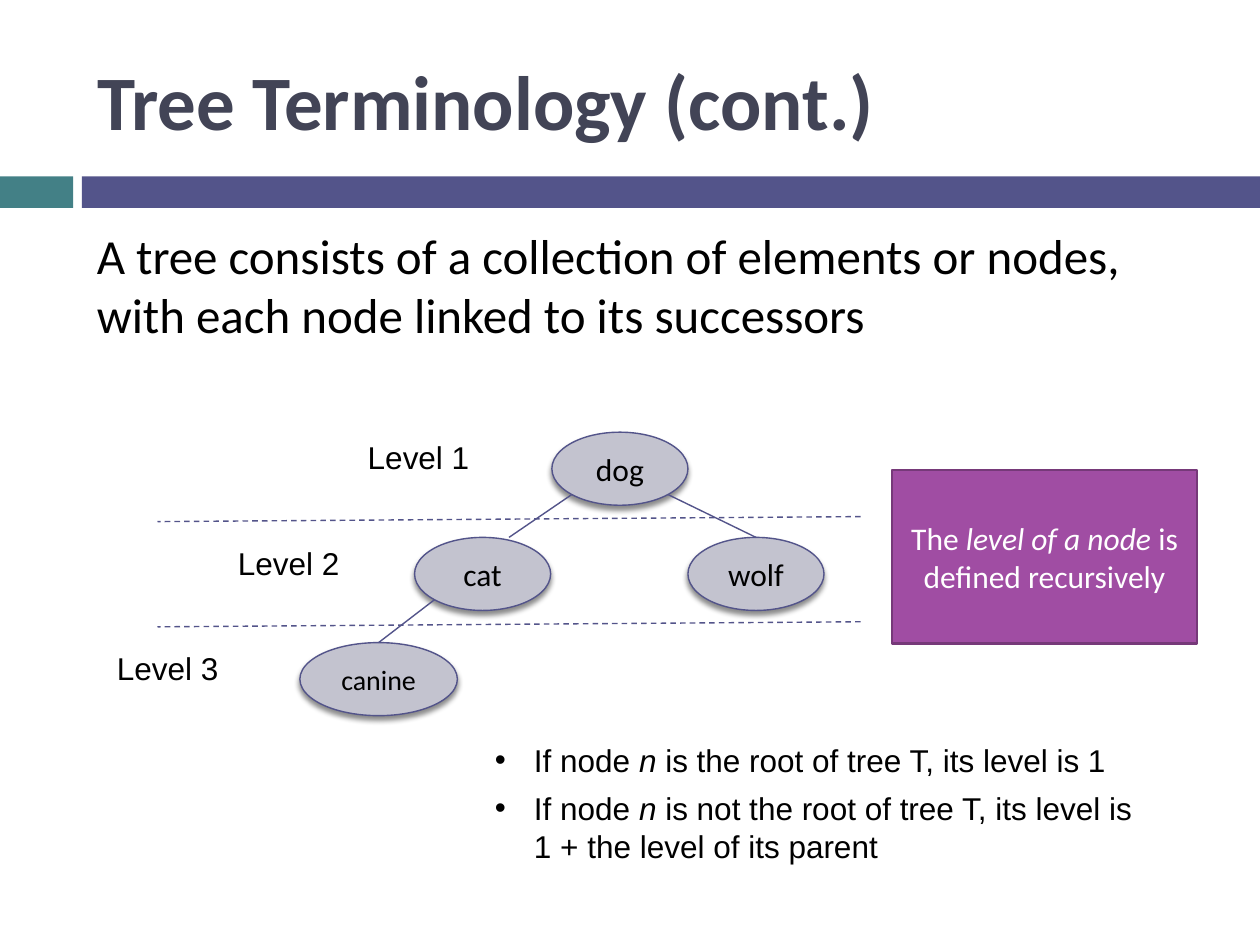
from lxml import etree
from pptx import Presentation
from pptx.dml.color import RGBColor
from pptx.enum import dml, shapes, text
from pptx.oxml import parse_xml
from pptx.oxml.ns import nsdecls, qn
from pptx.util import Inches, Pt

HUES = {"teal": "438086", "indigo": "53548A", "title": "424456",
        "node": "C3C3CF", "purple": "A04DA3", "edge": "763979",
        "black": "000000", "white": "FFFFFF"}

TITLE = "Tree Terminology (cont.)"
INTRO = ("A tree consists of a collection of elements or nodes, "
         "with each node linked to its successors")
# Each run is (words, italic)
NOTE = [("The ", False), ("level of a node", True),
        (" is defined recursively", False)]
RULES = [
    [("If node ", False), ("n", True),
     (" is the root of tree T, its level is 1", False)],
    [("If node ", False), ("n", True),
     (" is not the root of tree T, its level is \v1 + the level of its parent", False)],
]
BARS = [(0, 0.58, "teal"), (0.65, 9.35, "indigo")]
# name: (level, left, width, text size)
NODES = {"dog": (1, 4.38, 1.08, 18), "cat": (2, 3.29, 1.08, 18),
         "wolf": (2, 5.46, 1.08, 18), "canine": (3, 2.38, 1.25, 16)}
# parent, side the link leaves from, child, shift at the child's top
LINKS = [("dog", -1, "cat", 0.21), ("dog", 1, "wolf", 0),
         ("cat", -1, "canine", 0)]
LABELS = [2.82, 1.79, 0.83]
TOP, STEP, HIGH = 3.43, 0.835, 0.58
DIAG = 0.354  # share of an ellipse's size from its centre to its 45° point


def hue(name):
    return RGBColor.from_string(HUES[name])


def level_top(level):
    return TOP + (level - 1) * STEP


def write(para, runs, size, color="black", font="Calibri", bold=False):
    for words, slant in runs:
        for i, part in enumerate(words.split("\v")):
            if i:
                para.add_line_break()
            run = para.add_run()
            run.text = part
            run.font.size, run.font.name = Pt(size), font
            run.font.italic, run.font.bold = slant, bold
            run.font.color.rgb = hue(color)


def add_text(slide, box, wrap=True):
    frame = slide.shapes.add_textbox(*map(Inches, box)).text_frame
    frame.word_wrap = wrap
    return frame


def add_block(slide, kind, box, fill, line=None, width=0.79):
    shape = slide.shapes.add_shape(kind, *map(Inches, box))
    shape.shadow.inherit = False
    shape.fill.solid()
    shape.fill.fore_color.rgb = hue(fill)
    if line:
        shape.line.color.rgb = hue(line)
        shape.line.width = Pt(width)
    else:
        shape.line.fill.background()
    frame = shape.text_frame
    frame.word_wrap = True
    frame.vertical_anchor = text.MSO_ANCHOR.MIDDLE
    frame.paragraphs[0].alignment = text.PP_ALIGN.CENTER
    return shape


def add_shadow(shape):
    effects = shape._element.spPr.find(qn("a:effectLst"))
    effects.append(parse_xml(
        f'<a:outerShdw {nsdecls("a")} blurRad="{Pt(3)}" dist="{Pt(2.4)}" '
        'dir="5400000" rotWithShape="0"><a:srgbClr val="000000">'
        '<a:alpha val="45000"/></a:srgbClr></a:outerShdw>'))


def add_line(slide, start, end, dash=False):
    line = slide.shapes.add_connector(
        shapes.MSO_CONNECTOR.STRAIGHT, *map(Inches, start + end))
    line.line.color.rgb = hue("indigo")
    line.line.width = Pt(0.79)
    if dash:
        line.line.dash_style = dml.MSO_LINE.DASH
    etree.SubElement(line._element.spPr, qn("a:effectLst"))


def add_bullet(para):
    props = para._p.get_or_add_pPr()
    props.set("marL", str(Inches(0.31)))
    props.set("indent", str(Inches(-0.31)))
    etree.SubElement(props, qn("a:buFont")).set("typeface", "Arial")
    etree.SubElement(props, qn("a:buChar")).set("char", "•")


def add_title(slide):
    title = slide.shapes.title
    title.left, title.top = Inches(0.67), Inches(0.25)
    title.width, title.height = Inches(8.92), Inches(1.08)
    frame = title.text_frame
    frame.word_wrap = True
    frame.vertical_anchor = text.MSO_ANCHOR.MIDDLE
    frame.paragraphs[0].alignment = text.PP_ALIGN.LEFT
    write(frame.paragraphs[0], [(TITLE, False)], 44, "title", bold=True)


def add_tree(slide):
    for name, (level, left, width, size) in NODES.items():
        node = add_block(slide, shapes.MSO_SHAPE.OVAL,
                         (left, level_top(level), width, HIGH), "node", "indigo")
        add_shadow(node)
        frame = node.text_frame
        frame.margin_left = frame.margin_right = Inches(0.05)
        write(frame.paragraphs[0], [(name, False)], size)
    for parent, side, child, shift in LINKS:
        level, left, width, _ = NODES[parent]
        low, near, span, _ = NODES[child]
        start = (left + width * (0.5 + side * DIAG),
                 level_top(level) + HIGH * (0.5 + DIAG))
        add_line(slide, start, (near + span / 2 + shift, level_top(low)))
    for level, left in enumerate(LABELS, 1):
        frame = add_text(slide, (left, level_top(level), 1.02, 0.4), wrap=False)
        write(frame.paragraphs[0], [(f"Level {level}", False)], 18, font="Arial")
    for level in (1, 2):
        y = level_top(level) + 0.67
        add_line(slide, (6.83, y), (1.25, y + 0.04), dash=True)


def main():
    deck = Presentation()
    deck.slide_width, deck.slide_height = Inches(10), Inches(7.5)
    slide = deck.slides.add_slide(deck.slide_layouts[5])
    for left, width, fill in BARS:
        add_block(slide, shapes.MSO_SHAPE.RECTANGLE, (left, 1.4, width, 0.25), fill)
    add_title(slide)
    intro = add_text(slide, (0.67, 1.74, 8.67, 1.04))
    write(intro.paragraphs[0], [(INTRO, False)], 28)
    add_tree(slide)
    note = add_block(slide, shapes.MSO_SHAPE.RECTANGLE,
                     (7.08, 3.73, 2.42, 1.38), "purple", "edge", 1.5)
    write(note.text_frame.paragraphs[0], NOTE, 18, "white")
    rules = add_text(slide, (3.83, 5.83, 5.5, 1.09))
    for i, runs in enumerate(RULES):
        para = rules.add_paragraph() if i else rules.paragraphs[0]
        para.space_after = Pt(6)
        add_bullet(para)
        write(para, runs, 18, font="Arial")
    deck.save("out.pptx")


if __name__ == "__main__":
    main()
